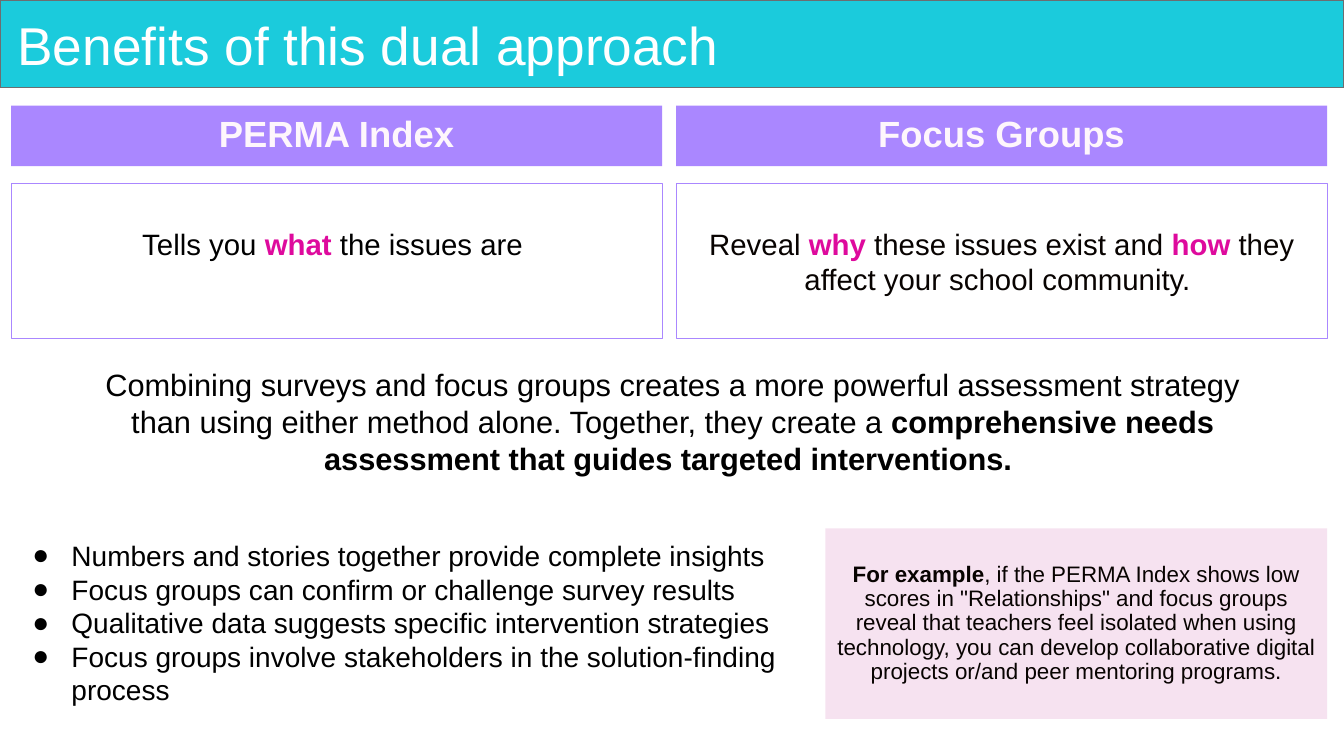
from pptx import Presentation
from pptx.util import Pt
from pptx.dml.color import RGBColor
from pptx.enum.shapes import MSO_SHAPE as Shape
from pptx.enum.text import PP_ALIGN as Align, MSO_ANCHOR as Anchor
from lxml.etree import SubElement as sub
from pptx.oxml.ns import qn

BLACK, DARK, PINK, PURPLE = "000000", "080301", "DE0A9D", "AA87FF"
LEFT, RIGHT, WIDE = 8, 483, 465
rgb = RGBColor.from_string


def box(left, top, wide, high, fill=None, line=None, weight=0.75):
    rect = slide.shapes.add_shape(Shape.RECTANGLE, Pt(left), Pt(top), Pt(wide), Pt(high))
    rect.shadow.inherit = False
    if fill:
        rect.fill.solid()
        rect.fill.fore_color.rgb = rgb(fill)
    else:
        rect.fill.background()
    if line:
        rect.line.color.rgb = rgb(line)
        rect.line.width = Pt(weight)
    else:
        rect.line.fill.background()
    return rect


def write(para, size, runs, align=Align.CENTER, space=1.0):
    """Fill a paragraph with runs given as (text, colour, bold)."""
    para.alignment = align
    para.line_spacing = space
    for text, color, bold in runs:
        run = para.add_run()
        run.text = text
        run.font.name = "Arial"
        run.font.size = Pt(size)
        run.font.bold = bold
        run.font.color.rgb = rgb(color)


deck = Presentation()
deck.slide_width, deck.slide_height = Pt(960), Pt(540)
slide = deck.slides.add_slide(deck.slide_layouts[5])

# Title on its bar
bar = box(0, 0, 960, 62.6, "1BCBDC", "6C6E70", 1)
slide.shapes._spTree.insert(2, bar._element)
title = slide.shapes.title
title.left, title.top, title.width, title.height = Pt(LEFT), Pt(6.5), Pt(940), Pt(56)
frame = title.text_frame
frame.vertical_anchor = Anchor.MIDDLE
frame.margin_left = frame.margin_right = Pt(4.5)
frame.margin_top = frame.margin_bottom = Pt(4.5)
write(frame.paragraphs[0], 38, [("Benefits of this dual approach", "FFFFFF", False)],
      Align.LEFT, 0.9)

# Two columns: heading above card; the left text sits a little higher
columns = [
    (LEFT, "PERMA Index", 28, [
        ("Tells you ", BLACK, False), ("what ", PINK, True),
        ("the issues are ", BLACK, False)]),
    (RIGHT, "Focus Groups", 3.6, [
        ("Reveal ", DARK, False), ("why ", PINK, True),
        ("these issues exist and ", DARK, False), ("how ", PINK, True),
        ("they affect your school community. ", DARK, False)]),
]
for left, name, foot, runs in columns:
    card = box(left, 131, WIDE, 111, line=PURPLE).text_frame
    card.margin_bottom = Pt(foot)
    write(card.paragraphs[0], 21, runs)
    head = box(left, 75.5, WIDE, 43.2, PURPLE).text_frame
    write(head.paragraphs[0], 26, [(name, "FEF6FC", True)], space=0.9)

# Summary and bullet list
summary = [[
    ("Combining surveys and focus groups creates a more powerful assessment strategy "
     "than using either method alone. Together, they create a ", BLACK, False),
    ("comprehensive needs assessment that guides targeted interventions. ", BLACK, True)]]
points = [[(text, BLACK, False)] for text in (
    "Numbers and stories together provide complete insights",
    "Focus groups can confirm or challenge survey results",
    "Qualitative data suggests specific intervention strategies",
    "Focus groups involve stakeholders in the solution-finding process")]
blocks = [
    (55, 254, 851, 94, 22, Align.CENTER, summary),
    (LEFT, 377.5, 565, 136, 20, Align.LEFT, points),
]
for left, top, wide, high, size, align, lines in blocks:
    frame = slide.shapes.add_textbox(Pt(left), Pt(top), Pt(wide), Pt(high)).text_frame
    frame.word_wrap = True
    frame.margin_left = frame.margin_right = Pt(7.2)
    frame.margin_top = frame.margin_bottom = Pt(7.2)
    for i, runs in enumerate(lines):
        para = frame.add_paragraph() if i else frame.paragraphs[0]
        write(para, size, runs, align)
        if lines is points:
            props = para._p.get_or_add_pPr()
            props.set("marL", str(Pt(36)))
            props.set("indent", str(Pt(-28)))
            sub(sub(props, qn("a:buClr")), qn("a:srgbClr"), val=BLACK)
            sub(props, qn("a:buFont"), typeface="Arial")
            sub(props, qn("a:buChar"), char="●")

# Example
note = box(589.5, 377.5, 358.5, 136, "F6E2F0").text_frame
write(note.paragraphs[0], 16, [
    ("For example", DARK, True),
    (', if the PERMA Index shows low scores in "Relationships" and focus groups '
     "reveal that teachers feel isolated when using technology, you can develop "
     "collaborative digital projects or/and peer mentoring programs.", DARK, False),
], space=0.9)

deck.save("out.pptx")
